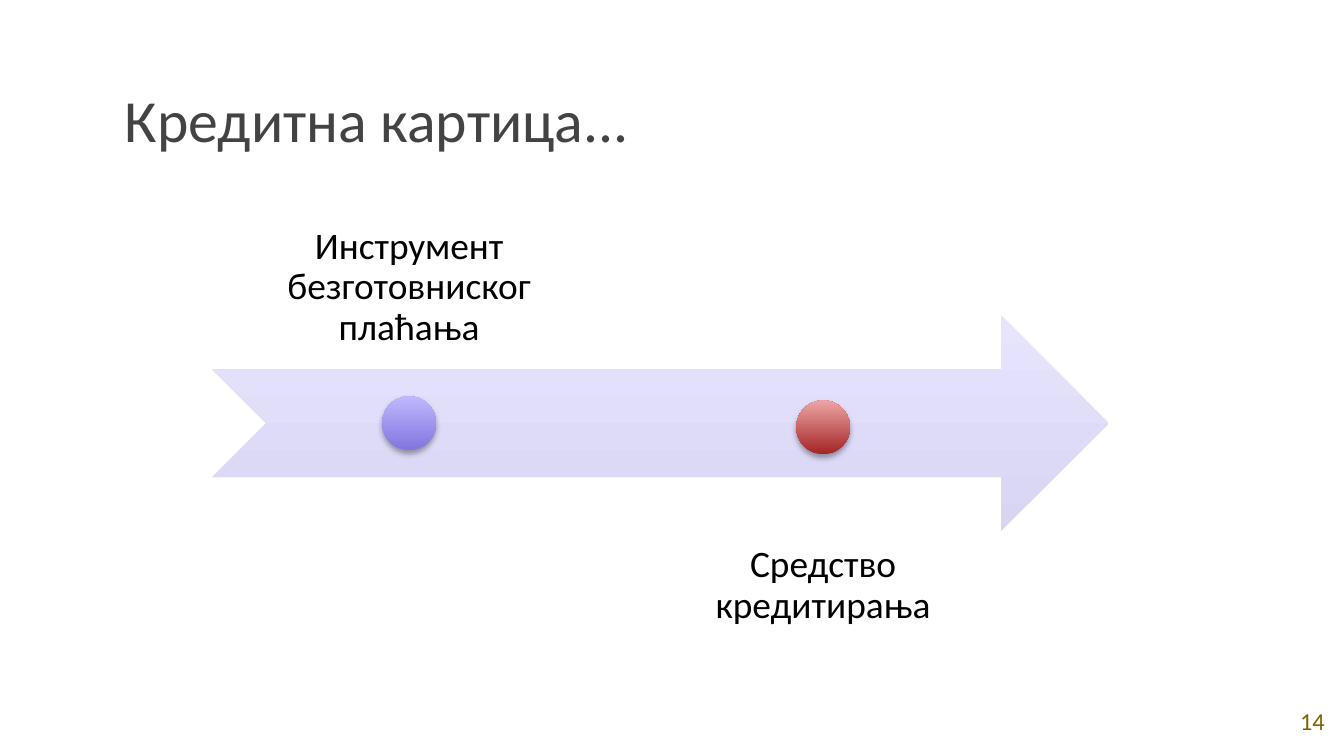
from dataclasses import dataclass

from lxml import etree
from pptx import Presentation
from pptx import util as u
from pptx.dml.color import RGBColor
from pptx.enum import shapes, text
from pptx.oxml.ns import qn

CELL = u.Inches(0.1)  # side of a square grid cell
COLUMNS = 100
ROWS = COLUMNS * 9 / 16
FONT = "Calibri"
LABEL_WIDTH = 29.3
MARKER_SIZE = 4


@dataclass(frozen=True)
class Box:
    column: float
    row: float
    width: float
    height: float

    def emu(self) -> tuple[int, ...]:
        cells = (self.column, self.row, self.width, self.height)
        return tuple(round(cell * CELL) for cell in cells)


@dataclass(frozen=True)
class TextStyle:
    size: float
    color: str
    align: text.PP_ALIGN
    anchor: text.MSO_ANCHOR
    inset: float = 1
    line_spacing: float = 1
    space_after: float = 0


@dataclass(frozen=True)
class Milestone:
    label: str
    center: float
    marker_row: float
    label_row: float
    label_height: float
    anchor: text.MSO_ANCHOR
    bottom_color: str
    top_color: str


MILESTONES = [
    Milestone("Инструмент безготовниског плаћања", 30.45, 29.5, 11.5, 16,
              text.MSO_ANCHOR.BOTTOM, "8275DE", "BFB8FF"),
    Milestone("Средство кредитирања", 61.25, 29.8, 39, 6,
              text.MSO_ANCHOR.TOP, "A52425", "EDA5A5"),
]


def rgb(color: str) -> RGBColor:
    return RGBColor.from_string(color)


def write_text(shape, box: Box, words: str, style: TextStyle) -> None:
    shape.left, shape.top, shape.width, shape.height = box.emu()
    frame = shape.text_frame
    frame.word_wrap = True
    frame.auto_size = text.MSO_AUTO_SIZE.NONE
    frame.vertical_anchor = style.anchor
    inset = round(style.inset * CELL)
    frame.margin_left = frame.margin_right = inset
    frame.margin_top = frame.margin_bottom = inset
    frame.text = words
    paragraph = frame.paragraphs[0]
    paragraph.alignment = style.align
    paragraph.line_spacing = style.line_spacing
    paragraph.space_before = u.Pt(0)
    paragraph.space_after = u.Pt(style.space_after)
    paragraph.font.name = FONT
    paragraph.font.size = u.Pt(style.size)
    paragraph.font.color.rgb = rgb(style.color)


def add_text(slide, box: Box, words: str, style: TextStyle) -> None:
    write_text(slide.shapes.add_textbox(*box.emu()), box, words, style)


def add_gradient_shape(slide, kind: shapes.MSO_SHAPE, box: Box,
                       bottom_color: str, top_color: str):
    shape = slide.shapes.add_shape(kind, *box.emu())
    shape.shadow.inherit = False
    shape.line.fill.background()
    shape.fill.gradient()
    shape.fill.gradient_angle = 90
    for stop, color in zip(shape.fill.gradient_stops, (bottom_color, top_color)):
        stop.color.rgb = rgb(color)
    return shape


def add_drop_shadow(shape) -> None:
    effects = shape._element.spPr.find(qn("a:effectLst"))
    shadow = etree.SubElement(
        effects, qn("a:outerShdw"), blurRad=str(u.Pt(3.1)), dist=str(u.Pt(1.8)),
        dir="5400000", rotWithShape="0")
    color = etree.SubElement(shadow, qn("a:srgbClr"), val="000000")
    etree.SubElement(color, qn("a:alpha"), val="35000")


def add_milestone(slide, milestone: Milestone) -> None:
    label_box = Box(milestone.center - LABEL_WIDTH / 2, milestone.label_row,
                    LABEL_WIDTH, milestone.label_height)
    style = TextStyle(20, "000000", text.PP_ALIGN.CENTER, milestone.anchor,
                      inset=1.6, line_spacing=0.9, space_after=7)
    add_text(slide, label_box, milestone.label, style)
    marker_box = Box(milestone.center - MARKER_SIZE / 2, milestone.marker_row,
                     MARKER_SIZE, MARKER_SIZE)
    marker = add_gradient_shape(slide, shapes.MSO_SHAPE.OVAL, marker_box,
                                milestone.bottom_color, milestone.top_color)
    add_drop_shadow(marker)


def main() -> None:
    presentation = Presentation()
    presentation.slide_width = round(COLUMNS * CELL)
    presentation.slide_height = round(ROWS * CELL)
    slide = presentation.slides.add_slide(presentation.slide_layouts[5])

    write_text(slide.shapes.title, Box(8.3, 1.5, 50, 11), "Кредитна картица...",
               TextStyle(32, "434343", text.PP_ALIGN.JUSTIFY, text.MSO_ANCHOR.BOTTOM))
    add_text(slide, Box(95.3, 51.1, 4.7, 5.1), "14",
             TextStyle(13, "7F6000", text.PP_ALIGN.CENTER, text.MSO_ANCHOR.MIDDLE))
    add_gradient_shape(slide, shapes.MSO_SHAPE.NOTCHED_RIGHT_ARROW,
                       Box(15.8, 23.5, 66.7, 16), "D8D5F2", "E7E4FF")
    for milestone in MILESTONES:
        add_milestone(slide, milestone)

    presentation.save("out.pptx")


if __name__ == "__main__":
    main()
